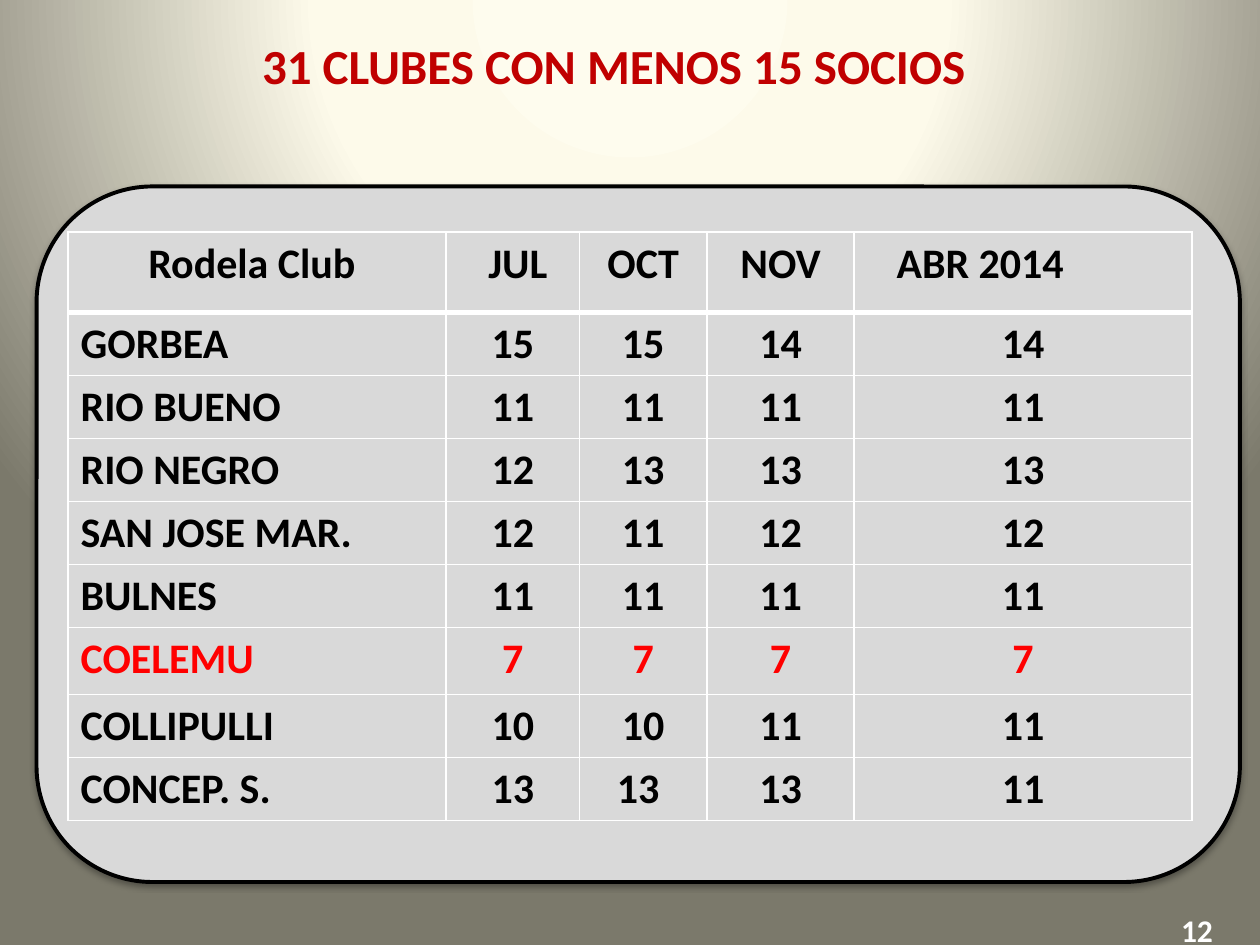
import pptx
import pptx.dml.color
import pptx.enum.shapes
import pptx.enum.text
import pptx.oxml
import pptx.util
from pptx.util import Inches

HUES = {"ink": "000000", "panel": "D9D9D9", "title": "C00000",
        "alert": "FF0000", "white": "FFFFFF"}
STOPS = [(0, "FEFCEE"), (40, "FDFAEA"), (100, "7B796B")]
NS = ('xmlns:a="http://schemas.openxmlformats.org/drawingml/2006/main" '
      'xmlns:p="http://schemas.openxmlformats.org/presentationml/2006/main"')
ALIGN = pptx.enum.text.PP_ALIGN


def tint(hue):
    return pptx.dml.color.RGBColor.from_string(HUES[hue])


def write(frame, text, size, hue, align=ALIGN.CENTER):
    """Put one bold run in the first paragraph of a text frame."""
    para = frame.paragraphs[0]
    para.alignment = align
    run = para.add_run()
    run.text = text
    run.font.name = "Calibri"
    run.font.size = pptx.util.Pt(size)
    run.font.bold = True
    run.font.color.rgb = tint(hue)


deck = pptx.Presentation()
deck.slide_width, deck.slide_height = Inches(10), Inches(7.5)
slide = deck.slides.add_slide(deck.slide_layouts[6])

# Background glow from above the top edge
stops = "".join(f'<a:gs pos="{pos * 1000}"><a:srgbClr val="{hue}"/></a:gs>'
                for pos, hue in STOPS)
back = pptx.oxml.parse_xml(
    f'<p:bg {NS}><p:bgPr><a:gradFill rotWithShape="1"><a:gsLst>{stops}</a:gsLst>'
    '<a:path path="circle"><a:fillToRect l="50000" t="-80000" r="50000" b="180000"/>'
    '</a:path></a:gradFill><a:effectLst/></p:bgPr></p:bg>')
slide.element.cSld.insert(0, back)

# Rounded panel with a soft shadow
panel = slide.shapes.add_shape(
    pptx.enum.shapes.MSO_SHAPE.ROUNDED_RECTANGLE,
    Inches(0.29), Inches(1.48), Inches(9.55), Inches(5.52))
panel.fill.solid()
panel.fill.fore_color.rgb = tint("panel")
panel.line.color.rgb = tint("ink")
panel.line.width = pptx.util.Pt(2.25)
panel.element.spPr.append(pptx.oxml.parse_xml(
    f'<a:effectLst {NS}><a:outerShdw blurRad="40000" dist="23000" dir="5400000" '
    f'rotWithShape="0"><a:srgbClr val="{HUES["ink"]}"><a:alpha val="35000"/>'
    '</a:srgbClr></a:outerShdw></a:effectLst>'))

# Page number and title
labels = [("12", 9.01, 7.18, 0.98, 0.4, 18, "white"),
          ("31 CLUBES CON MENOS 15 SOCIOS", 1.9, 0.23, 5.94, 0.57, 28, "title")]
for text, left, top, width, height, size, hue in labels:
    box = slide.shapes.add_textbox(
        Inches(left), Inches(top), Inches(width), Inches(height))
    box.text_frame.word_wrap = True
    write(box.text_frame, text, size, hue)

# Members per club
months = ["JUL", "OCT", "NOV", "ABR 2014"]
clubs = [
    ("GORBEA", 15, 15, 14, 14),
    ("RIO BUENO", 11, 11, 11, 11),
    ("RIO NEGRO", 12, 13, 13, 13),
    ("SAN JOSE MAR.", 12, 11, 12, 12),
    ("BULNES", 11, 11, 11, 11),
    ("COELEMU", 7, 7, 7, 7),
    ("COLLIPULLI", 10, 10, 11, 11),
    ("CONCEP. S.", 13, 13, 13, 11),
]
rows = [("Rodela Club", *months), *clubs]
widths = [3, 1.06, 1.01, 1.17, 2.68]
frame = slide.shapes.add_table(len(rows), len(widths), Inches(0.54),
                               Inches(1.84), Inches(8.92), Inches(4.68))
table = frame.table
table.first_row = table.horz_banding = False
for col, width in zip(table.columns, widths):
    col.width = Inches(width)

for r, row in enumerate(rows):
    low = row[0] == "COELEMU"
    table.rows[r].height = Inches(0.64 if r == 0 else 0.53 if low else 0.5)
    for c, value in enumerate(row):
        cell = table.cell(r, c)
        props = cell._tc.get_or_add_tcPr()
        for side in "LRTB":
            thick = (r, side) in [(0, "B"), (1, "T")]
            props.append(pptx.oxml.parse_xml(
                f'<a:ln{side} {NS} w="{38100 if thick else 12700}"><a:solidFill>'
                f'<a:srgbClr val="{HUES["white"]}"/></a:solidFill></a:ln{side}>'))
        cell.fill.background()
        name = c == 0 and r > 0
        write(cell.text_frame, str(value), 24, "alert" if low else "ink",
              ALIGN.LEFT if name else ALIGN.CENTER)

# Off-centre cells
table.cell(0, 0).margin_right = Inches(0.18)
table.cell(0, 1).margin_left = Inches(0.18)
table.cell(0, 4).margin_right = Inches(0.78)
table.cell(8, 2).margin_right = Inches(0.18)

deck.save("out.pptx")
